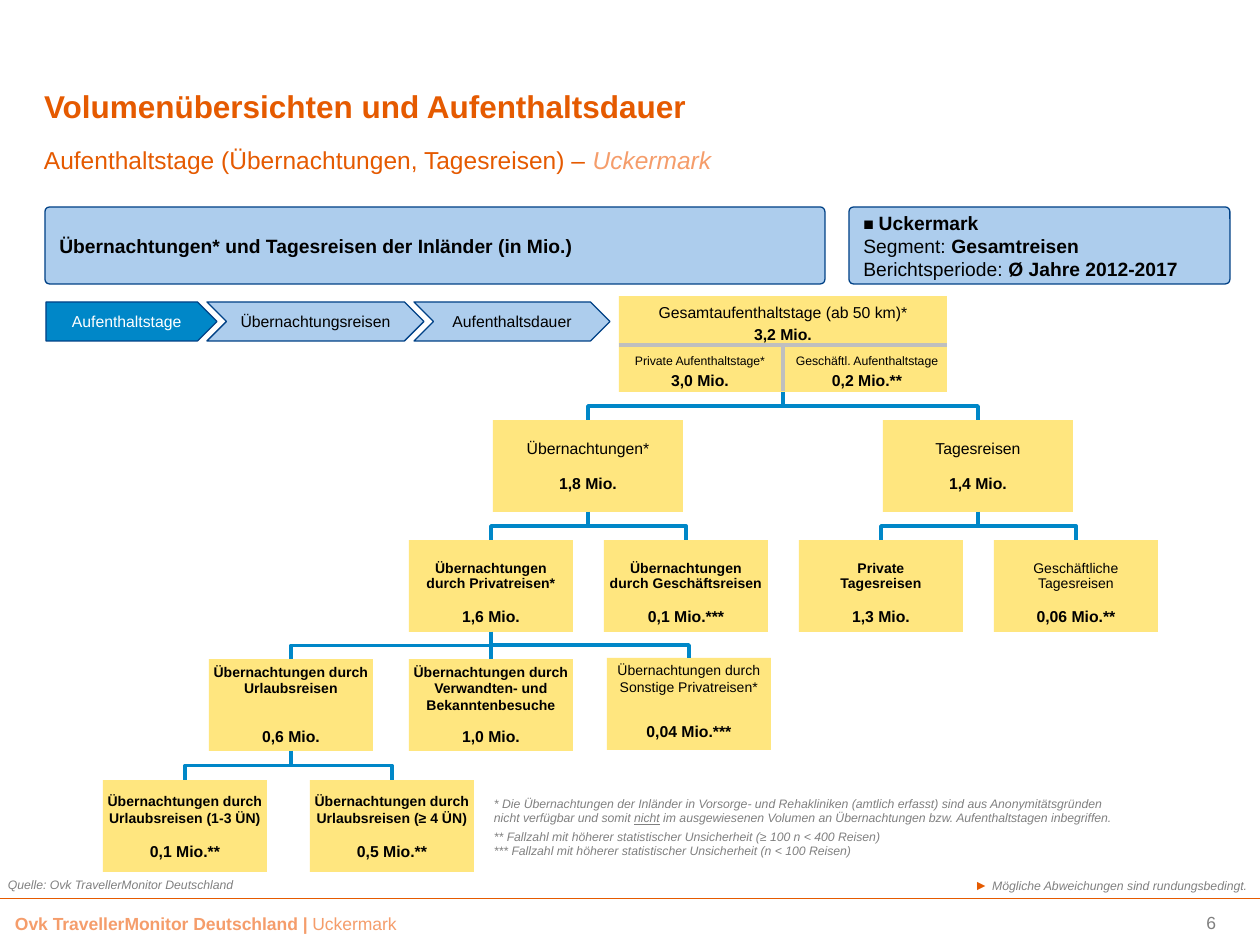
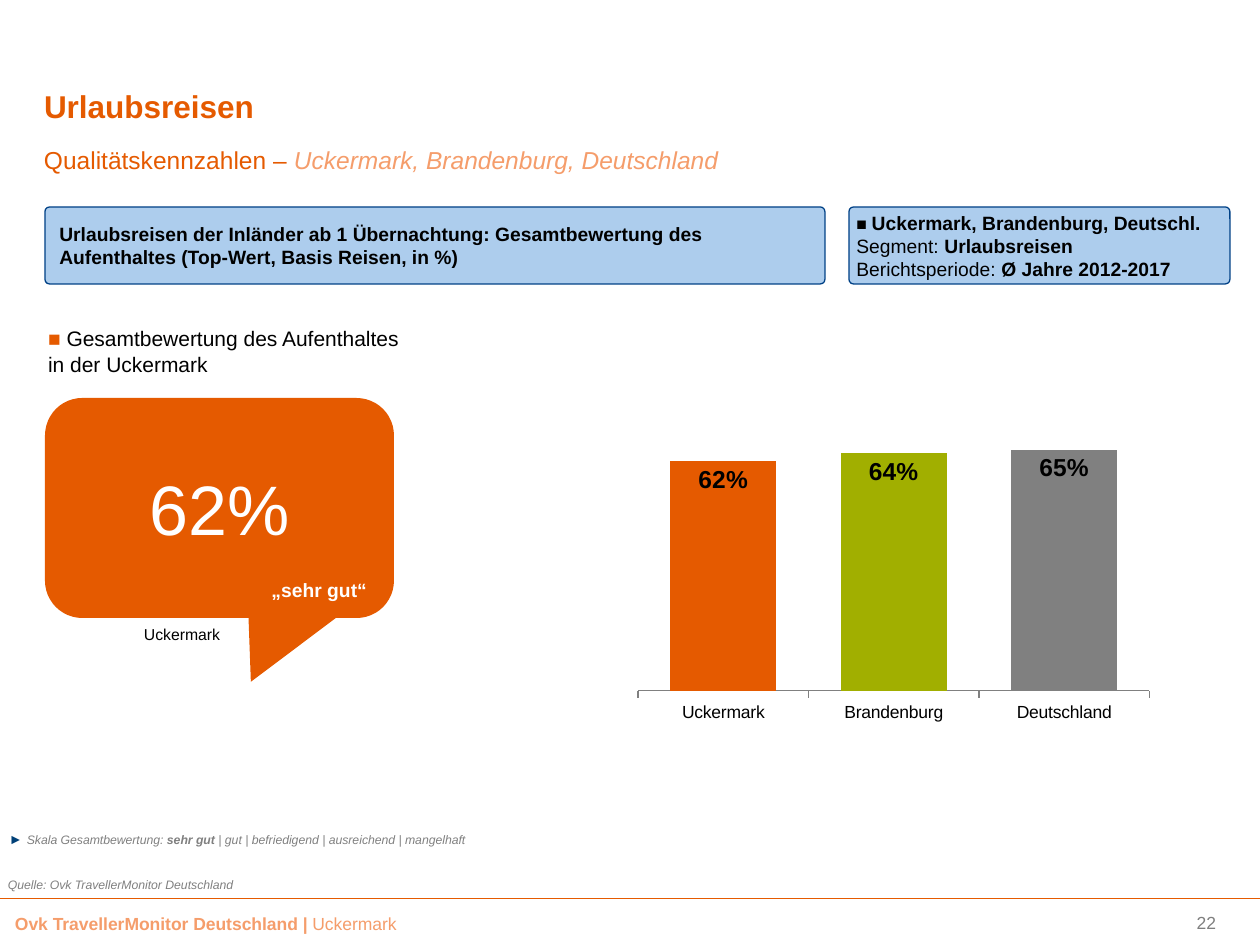
import pptx
import pptx.chart.data
import pptx.dml.color
import pptx.enum.chart
import pptx.enum.shapes
import pptx.enum.text
import pptx.oxml.ns
import pptx.util

PX = 914400 / 126
WIDTH, HEIGHT = 1260, 945
FONT = "Arial"
ORANGE, PEACH, BLACK, WHITE = "E55A00", "F59D6B", "000000", "FFFFFF"
GREY, SILVER, PAGE = "808080", "BFBFBF", "7F7F7F"
BLUE, SKY, NAVY, DARK = "0087C8", "ADCDED", "004186", "004178"
YELLOW, GREEN = "FFE67F", "A1AF00"
BRAND = "Ovk TravellerMonitor Deutschland"
REGION = "Uckermark"
INSET = (13, 6, 13, 6)
NOTE = {"size": 7, "color": GREY, "italic": True}
BOLD = {"bold": True}

SHAPE = pptx.enum.shapes.MSO_SHAPE
ALIGN = pptx.enum.text.PP_ALIGN
ANCHOR = pptx.enum.text.MSO_ANCHOR
Pt = pptx.util.Pt


def emu(*lengths):
    return [round(n * PX) for n in lengths]


def rgb(code):
    return pptx.dml.color.RGBColor.from_string(code)


def style(font, size, color, bold=False, italic=False, under=False):
    font.name, font.size = FONT, Pt(size)
    font.bold, font.italic, font.underline = bold, italic, under
    font.color.rgb = rgb(color)


def stroke(line, color, width):
    line.color.rgb = rgb(color)
    line.width = Pt(width)


def write(shape, paras, align="LEFT", anchor="TOP", inset=INSET, lead=1.0, gap=0,
          size=9, color=BLACK, **look):
    """Fill a shape; a run is a string or a (string, changes) pair."""
    frame = shape.text_frame
    frame.word_wrap = True
    frame.vertical_anchor = ANCHOR[anchor]
    (frame.margin_left, frame.margin_top,
     frame.margin_right, frame.margin_bottom) = emu(*inset)
    base = {"size": size, "color": color, **look}
    for i, runs in enumerate(paras):
        para = frame.add_paragraph() if i else frame.paragraphs[0]
        para.alignment, para.line_spacing = ALIGN[align], lead
        if i and gap:
            para.space_before = Pt(gap)
        for item in runs:
            words, change = (item, {}) if isinstance(item, str) else item
            for j, row in enumerate(words.split("\n")):
                if j:
                    para.add_line_break()
                run = para.add_run()
                run.text = row
                style(run.font, **{**base, **change})
    return shape


def label(slide, box, paras, **form):
    return write(slide.shapes.add_textbox(*emu(*box)), paras, **form)


def block(slide, kind, box, fill, edge=None):
    shape = slide.shapes.add_shape(kind, *emu(*box))
    shape.shadow.inherit = False
    shape.fill.solid()
    shape.fill.fore_color.rgb = rgb(fill)
    if edge:
        stroke(shape.line, edge, 0.75)
    else:
        shape.line.fill.background()
    return shape


def rule(slide, ends, color, width):
    line = slide.shapes.add_connector(pptx.enum.shapes.MSO_CONNECTOR.STRAIGHT, *emu(*ends))
    stroke(line.line, color, width)
    line._element.spPr.append(pptx.oxml.parse_xml(
        f"<a:effectLst {pptx.oxml.ns.nsdecls('a')}/>"))
    return line


def panel(slide, left, width, paras, inset=INSET, **look):
    shape = block(slide, SHAPE.ROUNDED_RECTANGLE, (left, 207, width, 77), SKY, NAVY)
    shape.adjustments[0] = 0.06
    write(shape, paras, anchor="MIDDLE", inset=inset, size=11, **look)


def start(deck, number, title, topic, places):
    """Add a slide with heading, footer and source line."""
    slide = deck.slides.add_slide(deck.slide_layouts[6])
    none = (0, 0, 0, 0)
    rule(slide, (0, 898, WIDTH, 898), ORANGE, 0.55)
    label(slide, (1037, 912, 179, 20), [[str(number)]], align="RIGHT", anchor="MIDDLE",
          inset=none, size=10, color=PAGE)
    label(slide, (2, 907, 848, 34), [[(BRAND + " | ", BOLD), REGION]], size=10, color=PEACH)
    label(slide, (44, 35, 873, 90), [[title]], anchor="BOTTOM", inset=none,
          size=18, color=ORANGE, bold=True)
    label(slide, (44, 145, 1170, 39),
          [[topic + " – ", (places, {"color": PEACH, "italic": True})]],
          inset=none, size=14, color=ORANGE)
    label(slide, (-5, 871, 605, 29), [["Quelle: " + BRAND]], **NOTE)
    return slide


def segment(slide, places, trips, inset=INSET):
    panel(slide, 849, 381,
          [[("■ ", {"size": 10, **BOLD}), (places, BOLD)], ["Segment: ", (trips, BOLD)],
           ["Berichtsperiode: ", ("Ø Jahre 2012-2017", BOLD)]], inset)


def node(slide, mid, top, name, value, width=164, height=92, size=8, bold=True,
         pad=4, gap=9.5, lead=1.0):
    """Add a yellow tree box centred on mid, with a name over a value."""
    box = block(slide, SHAPE.RECTANGLE, (mid - width // 2, top, width, height), YELLOW)
    paras = [[(name, {"bold": bold})], [(value, {"size": 9, **BOLD})]]
    return write(box, paras, align="CENTER", inset=(4, pad, 4, 4), size=size, gap=gap,
                 lead=lead)


def link(slide, parent, *kids):
    """Join the bottom of a parent to the top of each child."""
    x = parent.left + parent.width // 2
    y = parent.top + parent.height
    for kid in kids:
        end = kid.left + kid.width // 2
        if end == x:
            line = rule(slide, (0, 0, 0, 0), BLUE, 2)
            line.begin_connect(parent, 2)
            line.end_connect(kid, 0)
            continue
        bend = (y + kid.top) // 2
        pen = slide.shapes.build_freeform(x, y)
        pen.add_line_segments([(x, bend), (end, bend), (end, kid.top)], close=False)
        bracket = pen.convert_to_shape()
        bracket.shadow.inherit = False
        bracket.fill.background()
        stroke(bracket.line, BLUE, 2)


def tree(slide):
    root = node(slide, 783, 296, "Gesamtaufenthaltstage (ab 50 km)*", "3,2 Mio.",
                width=328, height=96, size=9, bold=False, gap=0.5, lead=1.14)
    for left, name, value in ((606, "Private Aufenthaltstage*", "3,0 Mio."),
                              (773, "Geschäftl. Aufenthaltstage", "0,2 Mio.**")):
        label(slide, (left, 347, 188, 50), [[(name, {"size": 7})], [(value, BOLD)]],
              align="CENTER", inset=(5, 6, 5, 6), gap=2)
    rule(slide, (783, 345, 783, 391), SILVER, 2)
    rule(slide, (619, 345, 947, 345), SILVER, 2)

    low = {"pad": 21, "gap": 10, "lead": 0.9}
    wide = {"width": 190, "size": 9, "bold": False, **low}
    nights = node(slide, 588, 420, "Übernachtungen*", "1,8 Mio.", **wide)
    days = node(slide, 978, 420, "Tagesreisen", "1,4 Mio.", **wide)
    link(slide, root, nights, days)

    names = (("Übernachtungen\ndurch Privatreisen*", "1,6 Mio."),
             ("Übernachtungen\ndurch Geschäftsreisen", "0,1 Mio.***"),
             ("Private\nTagesreisen", "1,3 Mio."),
             ("Geschäftliche\nTagesreisen", "0,06 Mio.**"))
    thirds = [node(slide, 491 + 195 * i, 540, name, value, bold=i < 3, **low)
              for i, (name, value) in enumerate(names)]
    link(slide, nights, *thirds[:2])
    link(slide, days, *thirds[2:])

    leisure = node(slide, 291, 659, "Übernachtungen durch Urlaubsreisen", "0,6 Mio.", gap=17.5)
    visits = node(slide, 491, 659, "Übernachtungen durch Verwandten- und Bekanntenbesuche",
                  "1,0 Mio.", gap=7.5)
    other = node(slide, 689, 658, "Übernachtungen durch Sonstige Privatreisen*",
                 "0,04 Mio.***", bold=False, gap=15)
    link(slide, thirds[0], leisure, visits, other)

    stays = [node(slide, mid, 780, f"Übernachtungen durch Urlaubsreisen ({span} ÜN)", value,
                  pad=13, gap=8.5)
             for mid, span, value in ((185, "1-3", "0,1 Mio.**"), (392, "≥ 4", "0,5 Mio.**"))]
    link(slide, leisure, *stays)


def steps(slide):
    for kind, left, width, name, fill, color in (
            (SHAPE.PENTAGON, 46, 171, "Aufenthaltstage", BLUE, WHITE),
            (SHAPE.CHEVRON, 207, 217, "Übernachtungsreisen", SKY, BLACK),
            (SHAPE.CHEVRON, 414, 196, "Aufenthaltsdauer", SKY, BLACK)):
        write(block(slide, kind, (left, 302, width, 39), fill, NAVY), [[name]],
              align="CENTER", anchor="MIDDLE", inset=(0, 6, 0, 6), color=color)


def volume(deck):
    slide = start(deck, 6, "Volumenübersichten und Aufenthaltsdauer",
                  "Aufenthaltstage (Übernachtungen, Tagesreisen)", REGION)
    panel(slide, 45, 780, [["Übernachtungen* und Tagesreisen der Inländer (in Mio.)"]], **BOLD)
    segment(slide, REGION, "Gesamtreisen")
    steps(slide)
    tree(slide)
    label(slide, (481, 790, 662, 43),
          [["* Die Übernachtungen der Inländer in Vorsorge- und Rehakliniken (amtlich erfasst) "
            "sind aus Anonymitätsgründen nicht verfügbar und somit ", ("nicht", {"under": True}),
            " im ausgewiesenen Volumen an Übernachtungen bzw. Aufenthaltstagen inbegriffen."]],
          **NOTE)
    doubt = "Fallzahl mit höherer statistischer Unsicherheit"
    label(slide, (481, 823, 640, 57), [[f"** {doubt} (≥ 100 n < 400 Reisen)"],
                                       [f"*** {doubt} (n < 100 Reisen)"]], **NOTE)
    label(slide, (829, 871, 431, 27),
          [[("► ", {"size": 8, "color": ORANGE, "italic": False}),
            "Mögliche Abweichungen sind rundungsbedingt."]], align="RIGHT", **NOTE)


def bars(slide):
    data = pptx.chart.data.CategoryChartData()
    data.categories = [REGION, "Brandenburg", "Deutschland"]
    data.add_series("Gesamtbewertung", (0.62, 0.64, 0.65), "0%")
    kinds = pptx.enum.chart
    chart = slide.shapes.add_chart(kinds.XL_CHART_TYPE.COLUMN_CLUSTERED,
                                   *emu(610, 320, 562, 426), data).chart
    style(chart.font, 18, BLACK)
    chart.has_title = chart.has_legend = False
    plot = chart.plots[0]
    plot.vary_by_categories = False
    plot.gap_width, plot.overlap = 61, 52
    for i, color in enumerate((ORANGE, GREEN, GREY)):
        fill = plot.series[0].points[i].format.fill
        fill.solid()
        fill.fore_color.rgb = rgb(color)

    plot.has_data_labels = True
    marks = plot.data_labels
    marks.show_value = True
    marks.number_format, marks.number_format_is_linked = "0%", False
    marks.position = kinds.XL_LABEL_POSITION.INSIDE_END
    style(marks.font, 14, BLACK, bold=True)

    scale, base = chart.value_axis, chart.category_axis
    scale.minimum_scale, scale.maximum_scale = 0, 1
    scale.has_major_gridlines = scale.visible = False
    base.major_tick_mark = kinds.XL_TICK_MARK.OUTSIDE
    base.format.line.color.rgb = rgb(GREY)
    style(base.tick_labels.font, 10, BLACK)

    area = chart._chartSpace.chart.plotArea
    for old in area.findall(pptx.oxml.ns.qn("c:layout")):
        area.remove(old)
    sizes = "".join(f'<c:{key} val="{val}"/>' for key, val in (
        ("layoutTarget", "inner"), ("xMode", "edge"), ("yMode", "edge"),
        ("x", 0.05), ("y", 0), ("w", 0.91), ("h", 0.87)))
    area.insert(0, pptx.oxml.parse_xml(f"<c:layout {pptx.oxml.ns.nsdecls('c')}>"
                                       f"<c:manualLayout>{sizes}</c:manualLayout></c:layout>"))


def quality(deck):
    slide = start(deck, 22, "Urlaubsreisen", "Qualitätskennzahlen",
                  "Uckermark, Brandenburg, Deutschland")
    panel(slide, 45, 780, [["Urlaubsreisen der Inländer ab 1 Übernachtung: Gesamtbewertung "
                            "des Aufenthaltes (Top-Wert, Basis Reisen, in %)"]], **BOLD)
    segment(slide, "Uckermark, Brandenburg, Deutschl.", "Urlaubsreisen", inset=(6, 6, 0, 6))
    label(slide, (35, 320, 499, 63),
          [[("■", {"color": ORANGE}), " Gesamtbewertung des Aufenthaltes\nin der Uckermark"]],
          size=12)
    bubble = block(slide, SHAPE.ROUNDED_RECTANGULAR_CALLOUT, (45, 398, 349, 220), ORANGE)
    for i, value in enumerate((0.09, 0.79, 0.17)):
        bubble.adjustments[i] = value
    write(bubble, [["62%"]], align="CENTER", anchor="MIDDLE", size=40, color=WHITE)
    label(slide, (45, 572, 335, 37), [["„sehr gut“"]], align="RIGHT", size=11, color=WHITE,
          **BOLD)
    label(slide, (131, 619, 102, 32), [[REGION]], align="CENTER", inset=(0, 6, 0, 6))
    bars(slide)
    label(slide, (-4, 824, 1264, 30),
          [[("► ", {"size": 8, "color": DARK, "italic": False}), "Skala Gesamtbewertung: ",
            ("sehr gut ", BOLD), "| gut | befriedigend | ausreichend | mangelhaft"]], **NOTE)


def main():
    deck = pptx.Presentation()
    deck.slide_width, deck.slide_height = emu(WIDTH, HEIGHT)
    volume(deck)
    quality(deck)
    deck.save("out.pptx")


if __name__ == "__main__":
    main()
